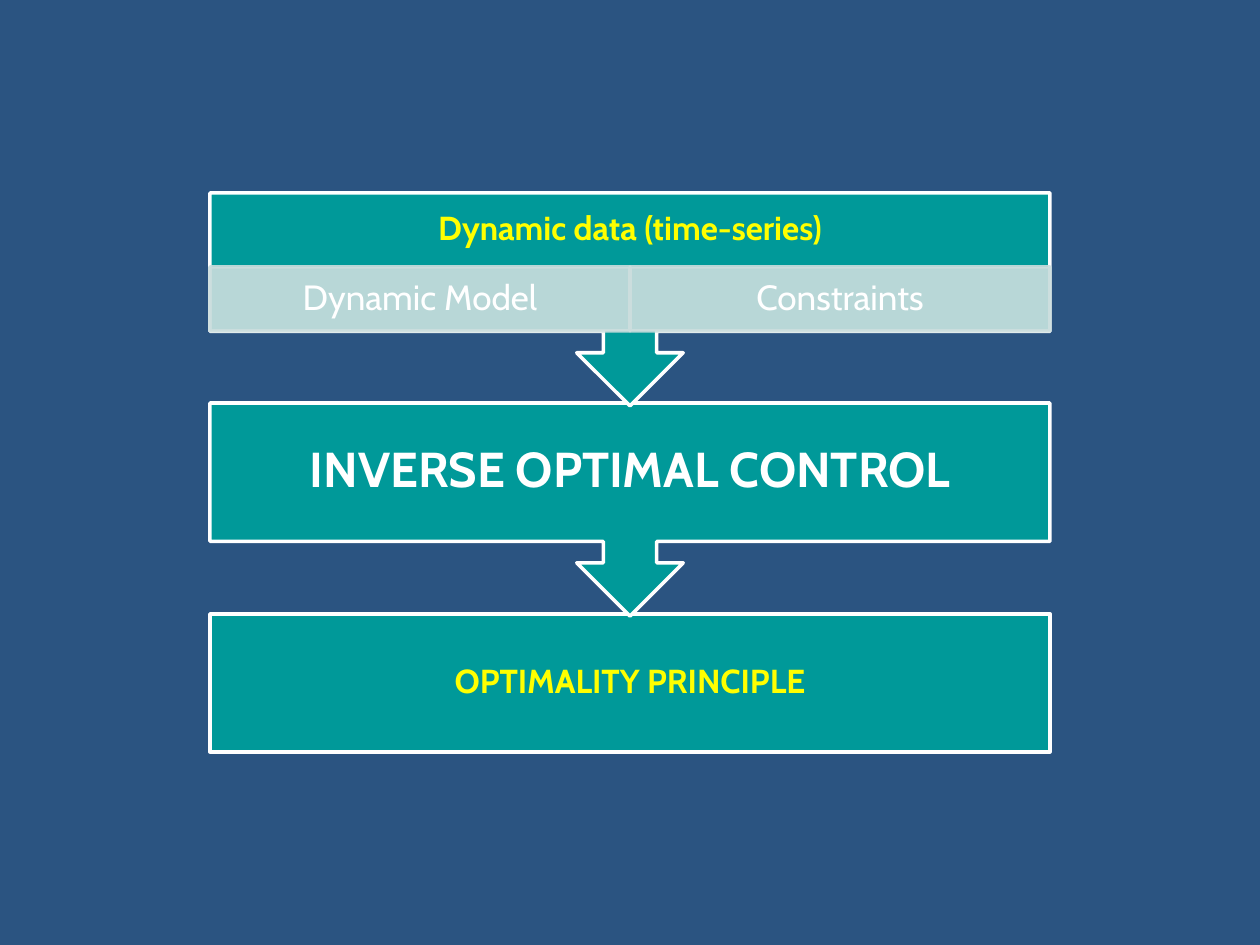
import pptx
import pptx.dml.color
import pptx.enum.shapes
import pptx.enum.text
import pptx.oxml.ns
import pptx.util
from lxml import etree

PX = 914400 // 126
SHAPES = pptx.enum.shapes.MSO_SHAPE
TEAL, PALE, WHITE, YELLOW = "009999", "CCDEDE", "FFFFFF", "FFFF00"


def rgb(value):
    return pptx.dml.color.RGBColor.from_string(value)


def px(*lengths):
    return [length * PX for length in lengths]


class Diagram:
    font = "Cabin"
    line_width = 2

    def __init__(self, slide):
        self.slide = slide

    def background(self, color):
        fill = self.slide.background.fill
        fill.solid()
        fill.fore_color.rgb = rgb(color)

    def block(self, kind, box, fill, line, opacity=100):
        shape = self.slide.shapes.add_shape(kind, *px(*box))
        shape.shadow.inherit = False
        shape.fill.solid()
        shape.fill.fore_color.rgb = rgb(fill)
        shape.line.color.rgb = rgb(line)
        shape.line.width = pptx.util.Pt(self.line_width)
        if opacity < 100:
            for color in shape._element.spPr.iter(pptx.oxml.ns.qn("a:srgbClr")):
                alpha = etree.SubElement(color, pptx.oxml.ns.qn("a:alpha"))
                alpha.set("val", str(opacity * 1000))
        return shape

    def callout(self, box):
        shape = self.block(SHAPES.UP_ARROW_CALLOUT, box, TEAL, WHITE)
        shape.rotation = 180

    def label(self, box, text, size, color, inset):
        shape = self.slide.shapes.add_textbox(*px(*box))
        self.set_text(shape, text, size, color, inset, inset, True)

    def set_text(self, shape, text, size, color, inset_x, inset_y, bold=False):
        frame = shape.text_frame
        frame.word_wrap = True
        frame.vertical_anchor = pptx.enum.text.MSO_ANCHOR.MIDDLE
        frame.margin_left, frame.margin_right = px(inset_x, inset_x)
        frame.margin_top, frame.margin_bottom = px(inset_y, inset_y)
        paragraph = frame.paragraphs[0]
        paragraph.alignment = pptx.enum.text.PP_ALIGN.CENTER
        paragraph.line_spacing = 0.9
        run = paragraph.add_run()
        run.text = text
        run.font.name = self.font
        run.font.size = pptx.util.Pt(size)
        run.font.bold = bold
        run.font.color.rgb = rgb(color)


def main():
    presentation = pptx.Presentation()
    presentation.slide_width = pptx.util.Inches(10)
    presentation.slide_height = pptx.util.Inches(7.5)
    slide = presentation.slides.add_slide(presentation.slide_layouts[6])
    diagram = Diagram(slide)
    diagram.background("2B5481")

    left, width, height, callout_height = 210, 840, 138, 213
    data_top, control_top, principle_top = 193, 403, 614

    # Result at the bottom of the flow
    principle = diagram.block(
        SHAPES.RECTANGLE, (left, principle_top, width, height), TEAL, WHITE)
    diagram.set_text(principle, "OPTIMALITY PRINCIPLE", 19, YELLOW, 19, 19, True)

    # Method in the middle
    diagram.callout((left, control_top, width, callout_height))
    diagram.label((left, control_top, width, height),
                  "INVERSE OPTIMAL CONTROL", 28, WHITE, 28)

    # Input data at the top
    heading_height = 74
    diagram.callout((left, data_top, width, callout_height))
    diagram.label((left, data_top, width, heading_height),
                  "Dynamic data (time-series)", 19, YELLOW, 19)

    # Two halves under the input heading
    half = width // 2
    for column, text in enumerate(("Dynamic Model", "Constraints")):
        box = (left + column * half, data_top + heading_height, half, 64)
        part = diagram.block(SHAPES.RECTANGLE, box, PALE, PALE, opacity=90)
        diagram.set_text(part, text, 20, WHITE, 20, 4)

    presentation.save("out.pptx")


if __name__ == "__main__":
    main()
